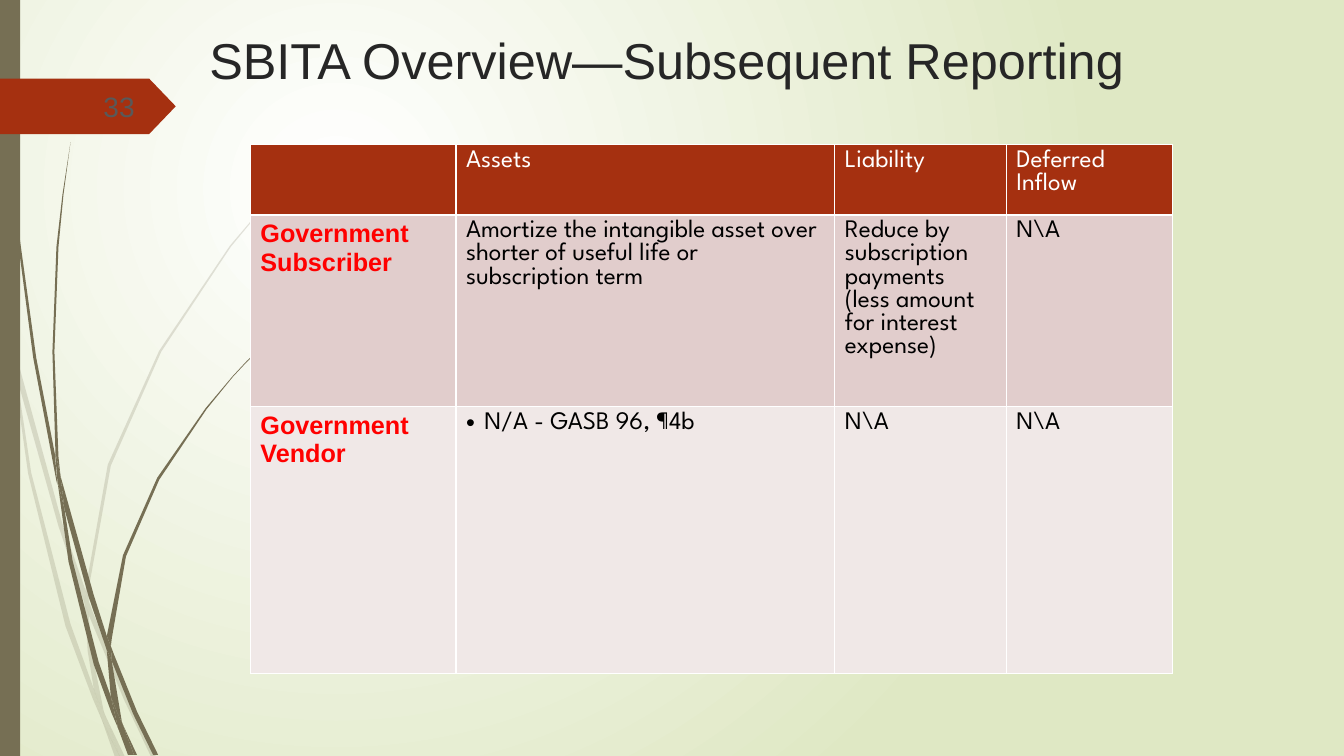
import lxml.etree
import pptx
import pptx.dml.color
import pptx.enum.shapes
import pptx.enum.text
import pptx.oxml
import pptx.oxml.ns
import pptx.util

Cm = pptx.util.Cm
qn = pptx.oxml.ns.qn
OLIVE, RUST, WHITE = "766F54", "A53010", "FFFFFF"
GRASS_UNIT = Cm(0.0254)

# Each blade piece is the outline of one stretch of grass, in grass units.
PALE_BLADES = [
    [(11, 350), (9, 322), (0, 282), (0, 299), (10, 344)],
    [(58, 522), (84, 599), (85, 586), (62, 520), (14, 345), (17, 376)],
    [(92, 607), (88, 596), (88, 610), (123, 694), (150, 751), (155, 751), (127, 692)],
    [(119, 751), (124, 751), (105, 711)],
    [(93, 683), (70, 619), (31, 469), (17, 376), (11, 350), (28, 470), (65, 621),
     (92, 693), (101, 714), (99, 707)],
    [(84, 599), (87, 646), (93, 683), (96, 692), (105, 711), (103, 706), (91, 646),
     (88, 610), (88, 608)],
    [(88, 584), (110, 462), (160, 349), (229, 245), (268, 198), (290, 175), (312, 154),
     (312, 153), (289, 175), (268, 197), (228, 244), (158, 348), (107, 461), (85, 584),
     (85, 586), (88, 596)],
    [(101, 714), (114, 751), (119, 751)],
    [(88, 608), (88, 610), (88, 596), (85, 586), (84, 599)],
    [(96, 692), (93, 683), (99, 707), (101, 714), (119, 751), (105, 711)],
]
DARK_BLADES = [
    [(7, 110), (17, 233), (33, 355), (56, 477), (57, 481), (55, 457), (55, 453),
     (36, 355), (19, 232), (8, 109), (5, 48), (4, 0), (3, 0), (4, 48)],
    [(88, 592), (106, 645), (106, 633), (106, 631), (93, 590), (60, 472), (64, 505)],
    [(113, 649), (110, 641), (111, 656), (132, 708), (152, 749), (157, 749), (136, 706)],
    [(110, 691), (98, 657), (72, 556), (64, 505), (57, 477), (68, 557), (93, 659),
     (111, 708), (117, 722), (116, 717)],
    [(60, 472), (58, 453), (54, 349), (58, 245), (63, 193), (70, 141), (62, 193),
     (56, 245), (52, 349), (55, 449)],
    [(133, 749), (136, 749), (122, 719)],
    [(57, 477), (64, 505), (60, 472), (55, 449), (55, 453)],
    [(111, 633), (125, 552), (158, 476), (205, 406), (231, 374), (245, 359), (261, 344),
     (260, 344), (245, 358), (231, 373), (204, 405), (156, 474), (122, 551), (106, 631),
     (110, 641)],
    [(117, 722), (127, 749), (131, 749)],
    [(106, 645), (110, 691), (116, 706), (122, 719), (121, 716), (111, 656), (109, 651)],
    [(106, 645), (109, 651), (111, 656), (110, 641), (106, 631), (106, 633)],
    [(116, 706), (110, 691), (116, 717), (117, 722), (130, 749), (133, 749), (122, 719)],
]
ROWS = [
    ["", "Assets", "Liability", "Deferred Inflow"],
    ["Government Subscriber",
     "Amortize the intangible asset over shorter of useful life or subscription term",
     "Reduce by subscription payments (less amount for interest expense)", "N\\A"],
    ["Government Vendor", "N/A - GASB 96, ¶4b", "N\\A", "N\\A"],
]
ROW_FILLS = [RUST, "E1CDCC", "F0E8E7"]
COLUMN_SHARES = [2.04, 3.76, 1.7, 1.65]
ROW_SHARES = [0.7, 1.9, 2.65]


def color(value):
    return pptx.dml.color.RGBColor.from_string(value)


def write_text(text_frame, text, size=18, font="League Spartan", fill="000000",
               bold=False, align=pptx.enum.text.PP_ALIGN.LEFT):
    paragraph = text_frame.paragraphs[0]
    paragraph.alignment = align
    run = paragraph.add_run()
    run.text = text
    run.font.size = pptx.util.Pt(size)
    run.font.name = font
    run.font.bold = bold
    run.font.color.rgb = color(fill)
    return paragraph


def paint(shape, fill, opacity=100):
    shape.shadow.inherit = False
    shape.line.fill.background()
    shape.fill.solid()
    shape.fill.fore_color.rgb = color(fill)
    if opacity < 100:
        for node in shape._element.spPr.iter(qn("a:srgbClr")):
            lxml.etree.SubElement(node, qn("a:alpha"), val=str(opacity * 1000))


def add_grass(slide, left, top, blades, opacity=100):
    for outline in blades:
        points = [(left + x * GRASS_UNIT, top + y * GRASS_UNIT) for x, y in outline]
        builder = slide.shapes.build_freeform(*points[0])
        builder.add_line_segments(points[1:], close=True)
        paint(builder.convert_to_shape(), OLIVE, opacity)


def add_background(slide):
    fill = slide.background.fill
    fill.gradient()
    for stop, value in zip(fill.gradient_stops, [WHITE, "DFE8C4"]):
        stop.color.rgb = color(value)
    gradient = slide._element.find(".//" + qn("a:gradFill"))
    gradient.remove(gradient.find(qn("a:lin")))
    circle = lxml.etree.SubElement(gradient, qn("a:path"), {"path": "circle"})
    lxml.etree.SubElement(circle, qn("a:fillToRect"),
                          l="50000", t="50000", r="100000", b="100000")


def add_side_band(slide, left, top, height):
    band = slide.shapes.add_shape(pptx.enum.shapes.MSO_SHAPE.RECTANGLE,
                                  left, top, Cm(0.51), height)
    paint(band, OLIVE)


def add_page_tag(slide, left, top, width, height, number):
    tag = slide.shapes.add_shape(pptx.enum.shapes.MSO_SHAPE.PENTAGON,
                                 left, top, width, height)
    tag.adjustments[0] = 0.48
    paint(tag, RUST)
    frame = tag.text_frame
    frame.margin_left = frame.margin_top = frame.margin_bottom = 0
    frame.margin_right = Cm(0.7)
    frame.vertical_anchor = pptx.enum.text.MSO_ANCHOR.MIDDLE
    write_text(frame, number, size=20, font="Arial", fill="595959",
               align=pptx.enum.text.PP_ALIGN.RIGHT)


def add_title(slide, left, top, width, height, text):
    title = slide.shapes.title
    title.left, title.top, title.width, title.height = left, top, width, height
    frame = title.text_frame
    frame.word_wrap = True
    frame.auto_size = pptx.enum.text.MSO_AUTO_SIZE.NONE
    frame.vertical_anchor = pptx.enum.text.MSO_ANCHOR.TOP
    write_text(frame, text, size=36, font="Arial", fill="262626",
               align=pptx.enum.text.PP_ALIGN.CENTER)


def add_bullet(paragraph):
    properties = paragraph._p.get_or_add_pPr()
    properties.set("marL", str(Cm(0.46)))
    properties.set("indent", str(-Cm(0.46)))
    lxml.etree.SubElement(properties, qn("a:buFont"), typeface="Arial")
    lxml.etree.SubElement(properties, qn("a:buChar"), char="•")


def add_borders(cell):
    properties = cell._tc.get_or_add_tcPr()
    for index, side in enumerate(["lnL", "lnR", "lnT", "lnB"]):
        line = pptx.oxml.parse_xml(
            f'<a:{side} {pptx.oxml.ns.nsdecls("a")} w="{pptx.util.Pt(1)}">'
            f'<a:solidFill><a:srgbClr val="{WHITE}"/></a:solidFill></a:{side}>')
        properties.insert(index, line)


def add_reporting_table(slide, left, top, width, height):
    table = slide.shapes.add_table(len(ROWS), len(COLUMN_SHARES),
                                   left, top, width, height).table
    for column, share in zip(table.columns, COLUMN_SHARES):
        column.width = round(width * share / sum(COLUMN_SHARES))
    for row, share in zip(table.rows, ROW_SHARES):
        row.height = round(height * share / sum(ROW_SHARES))
    for row_index, texts in enumerate(ROWS):
        for column_index, text in enumerate(texts):
            cell = table.cell(row_index, column_index)
            cell.fill.solid()
            cell.fill.fore_color.rgb = color(ROW_FILLS[row_index])
            add_borders(cell)
            if row_index == 0:
                style = {"fill": WHITE}
            elif column_index == 0:
                style = {"font": "Arial", "fill": "FF0000", "bold": True}
            else:
                style = {}
            if text:
                paragraph = write_text(cell.text_frame, text, **style)
                if text.startswith("N/A"):
                    add_bullet(paragraph)


def main():
    presentation = pptx.Presentation()
    presentation.slide_width, presentation.slide_height = Cm(33.87), Cm(19.05)
    slide = presentation.slides.add_slide(presentation.slide_layouts[5])
    add_background(slide)
    add_grass(slide, 0, 0, PALE_BLADES, opacity=20)
    add_grass(slide, 0, 0, DARK_BLADES)
    add_side_band(slide, 0, 0, presentation.slide_height)
    add_page_tag(slide, 0, Cm(1.98), Cm(4.43), Cm(1.4), "33")
    add_title(slide, Cm(4.74), Cm(0.61), Cm(24.13), Cm(2.49),
              "SBITA Overview—Subsequent Reporting")
    add_reporting_table(slide, Cm(6.31), Cm(3.64), Cm(23.24), Cm(13.34))
    presentation.save("out.pptx")


if __name__ == "__main__":
    main()
